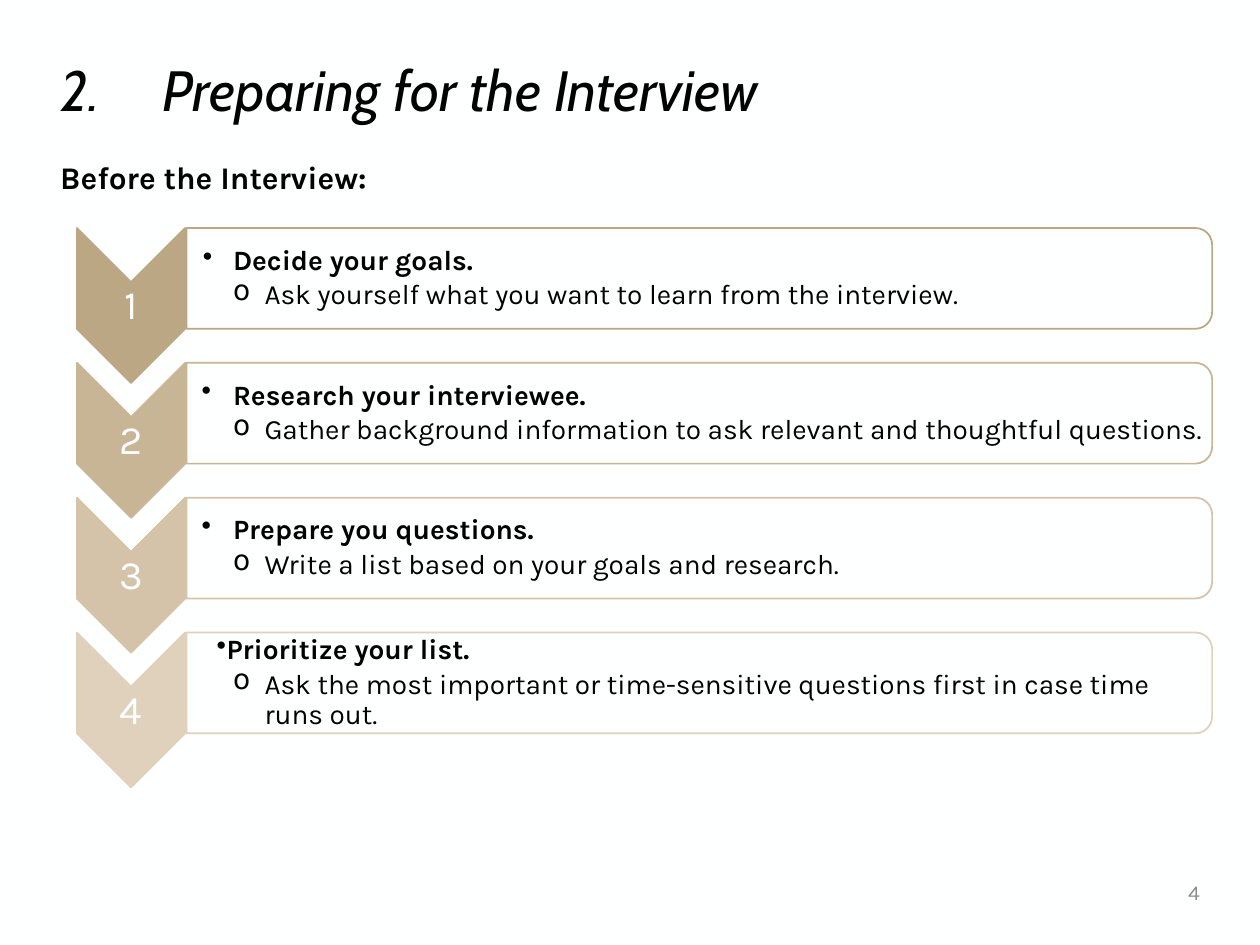
from lxml import etree
from pptx import Presentation
from pptx.dml.color import RGBColor
from pptx.enum.shapes import MSO_SHAPE
from pptx.enum.text import MSO_ANCHOR, MSO_AUTO_SIZE, PP_ALIGN
from pptx.oxml.ns import qn
from pptx.util import Inches, Pt

CHEVRON = MSO_SHAPE.CHEVRON
ROUNDED_PANEL = MSO_SHAPE.ROUND_2_SAME_RECTANGLE
LEFT, CENTER, RIGHT = PP_ALIGN.LEFT, PP_ALIGN.CENTER, PP_ALIGN.RIGHT
TOP, MIDDLE = MSO_ANCHOR.TOP, MSO_ANCHOR.MIDDLE

BLACK, WHITE, GRAY = "000000", "FEFFFF", "8C8C8C"
TITLE = "Preparing for the Interview"
SUBTITLE = "Before the Interview:"
PAGE_NUMBER = "4"
# colour, heading, detail, (left margin, first-line indent) of the heading
STEPS = [
    ("BCA784", "Decide your goals.",
     "Ask yourself what you want to learn from the interview.", (0.25, -0.24)),
    ("C8B596", "Research your interviewee.",
     "Gather background information to ask relevant and thoughtful questions.", (0.25, -0.25)),
    ("D4C3A9", "Prepare you questions.",
     "Write a list based on your goals and research.", (0.25, -0.25)),
    ("DFD1BC", "Prioritize your list.",
     "Ask the most important or time-sensitive questions first in case time runs out.", (0.12, 0)),
]
FIRST_TOP, STEP_PITCH = 1.81, 1.07
CHEVRON_LEFT, CHEVRON_WIDTH, CHEVRON_HEIGHT = 0.61, 0.86, 1.23
PANEL_LEFT, PANEL_WIDTH, PANEL_HEIGHT = 1.48, 8.14, 0.8


def rgb(color):
    return RGBColor.from_string(color)


def set_bullet(paragraph, tag, margin, indent, **attributes):
    properties = paragraph._p.get_or_add_pPr()
    properties.set("marL", str(Inches(margin)))
    properties.set("indent", str(Inches(indent)))
    etree.SubElement(properties, qn(tag), attributes)


def write(paragraph, text, size, color=BLACK, font="Karla", bold=False,
          italic=False, align=LEFT, spacing=0.9, after=0):
    paragraph.alignment = align
    paragraph.line_spacing = spacing
    paragraph.space_before = Pt(0)
    paragraph.space_after = Pt(after)
    run = paragraph.add_run()
    run.text = text
    run.font.name, run.font.size = font, Pt(size)
    run.font.bold, run.font.italic = bold, italic
    run.font.color.rgb = rgb(color)


def place(shape, left, top, width, height):
    shape.left, shape.top = Inches(left), Inches(top)
    shape.width, shape.height = Inches(width), Inches(height)


def add_text_box(slide, box, anchor=MIDDLE, insets=(0.1, 0.05, 0.1, 0.05)):
    frame = slide.shapes.add_textbox(*map(Inches, box)).text_frame
    frame.word_wrap = True
    frame.vertical_anchor = anchor
    (frame.margin_left, frame.margin_top,
     frame.margin_right, frame.margin_bottom) = map(Inches, insets)
    return frame


def add_turned_shape(slide, kind, left, top, width, height, fill, line):
    """Add a shape turned by 90 degrees that covers the given box."""
    center_x, center_y = left + width / 2, top + height / 2
    shape = slide.shapes.add_shape(
        kind, Inches(center_x - height / 2), Inches(center_y - width / 2),
        Inches(height), Inches(width))
    shape.rotation = 90
    shape.shadow.inherit = False
    shape.fill.solid()
    shape.fill.fore_color.rgb = rgb(fill)
    shape.line.color.rgb = rgb(line)
    shape.line.width = Pt(1)
    return shape


def set_opacity(shape, percent):
    color = shape.fill._xPr.find(qn("a:solidFill"))[0]
    etree.SubElement(color, qn("a:alpha"), val=str(percent * 1000))


def add_step(slide, number, top, color, heading, detail, heading_indent):
    add_turned_shape(slide, CHEVRON, CHEVRON_LEFT, top, CHEVRON_WIDTH,
                     CHEVRON_HEIGHT, color, color)
    label = add_text_box(slide, (CHEVRON_LEFT, top + 0.44, CHEVRON_WIDTH, 0.37),
                         insets=(0.02,) * 4)
    write(label.paragraphs[0], str(number), 23, WHITE, align=CENTER)

    panel = add_turned_shape(slide, ROUNDED_PANEL, PANEL_LEFT, top, PANEL_WIDTH,
                             PANEL_HEIGHT, WHITE, color)
    set_opacity(panel, 90)
    frame = add_text_box(slide, (PANEL_LEFT, top + 0.04, 8.1, 0.72),
                         insets=(0.12, 0.01, 0.01, 0.01))
    first, second = frame.paragraphs[0], frame.add_paragraph()
    first.level, second.level = 1, 2
    set_bullet(first, "a:buChar", *heading_indent, char="•")
    set_bullet(second, "a:buChar", 0.5, -0.25, char="o")
    write(first, heading, 16, bold=True, after=2.4)
    write(second, detail, 16)


def main():
    presentation = Presentation()
    presentation.slide_width, presentation.slide_height = Inches(10), Inches(7.5)
    slide = presentation.slides.add_slide(presentation.slide_layouts[5])
    slide.background.fill.solid()
    slide.background.fill.fore_color.rgb = rgb(WHITE)

    title = slide.shapes.title
    place(title, 0.38, 0.42, 9.24, 0.64)
    title.text_frame.auto_size = MSO_AUTO_SIZE.NONE
    title.text_frame.vertical_anchor = MIDDLE
    heading = title.text_frame.paragraphs[0]
    set_bullet(heading, "a:buAutoNum", 0.81, -0.81, type="arabicPeriod", startAt="2")
    write(heading, TITLE, 32.4, font="Cabin", italic=True)

    subtitle = add_text_box(slide, (0.38, 1.24, 9.24, 0.4), TOP)
    write(subtitle.paragraphs[0], SUBTITLE, 18, bold=True)

    for index, step in enumerate(STEPS):
        add_step(slide, index + 1, FIRST_TOP + index * STEP_PITCH, *step)

    page = add_text_box(slide, (8.42, 6.88, 1.2, 0.4))
    write(page.paragraphs[0], PAGE_NUMBER, 12, GRAY, align=RIGHT, spacing=1.0)
    presentation.save("out.pptx")


if __name__ == "__main__":
    main()
